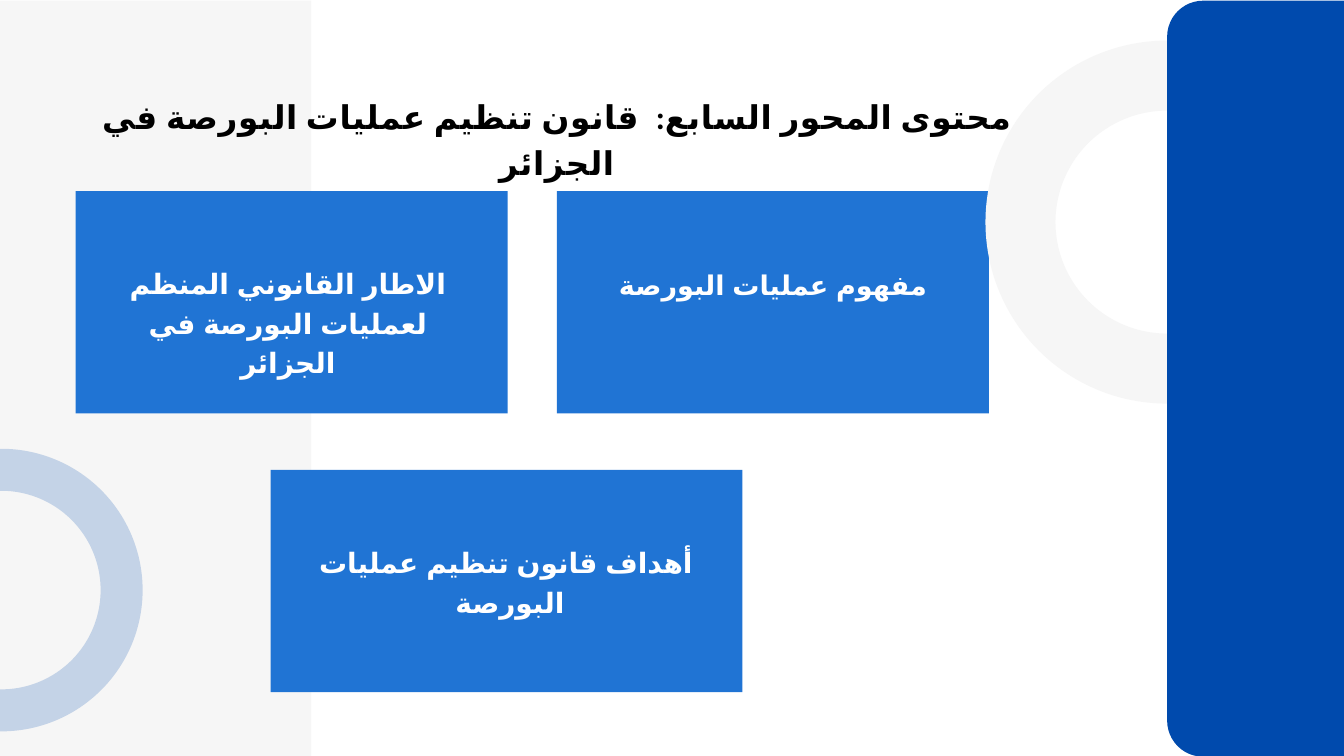
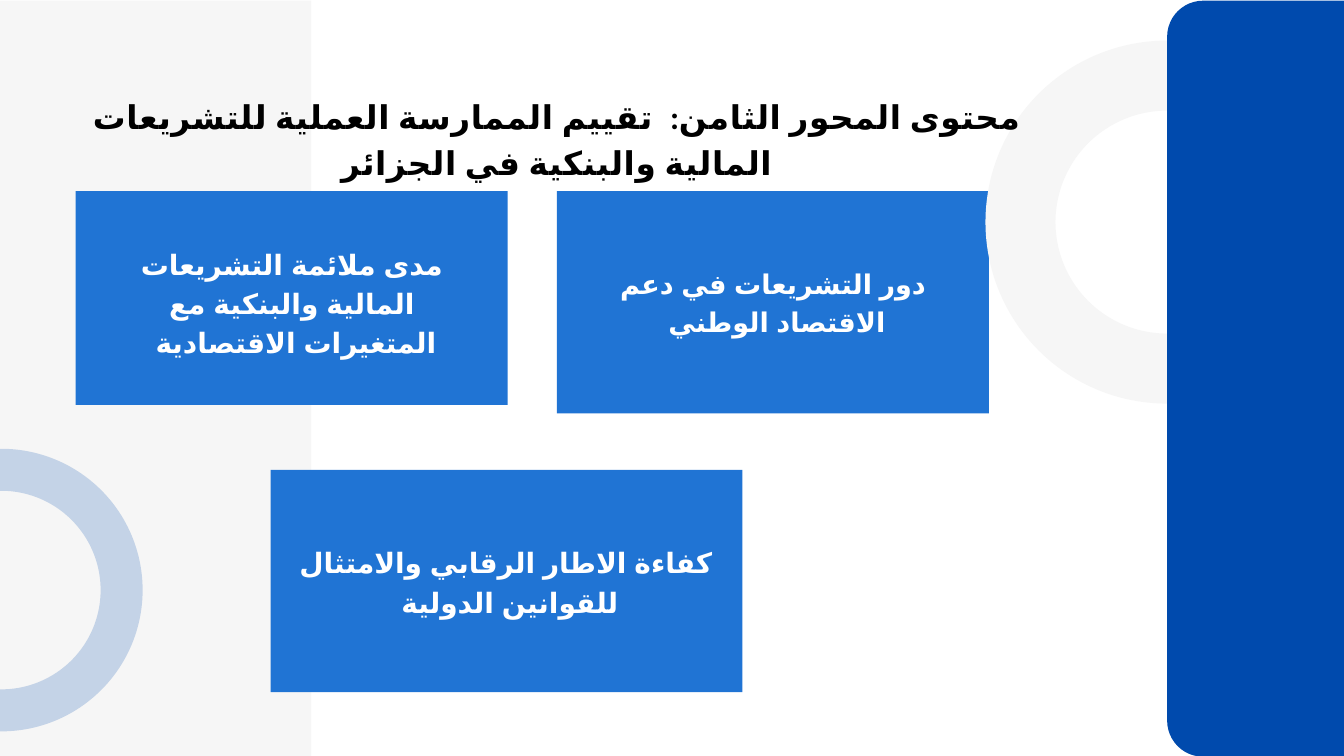
from dataclasses import dataclass

from lxml import etree
from pptx import Presentation
from pptx import util as u
from pptx.dml.color import RGBColor
from pptx.enum import shapes, text
from pptx.oxml import ns

PALE = RGBColor(0xF6, 0xF6, 0xF6)
CARD_BLUE = RGBColor(0x20, 0x74, 0xD4)
NAVY = RGBColor(0x00, 0x4A, 0xAD)
WHITE = RGBColor(0xFF, 0xFF, 0xFF)
BLACK = RGBColor(0x00, 0x00, 0x00)

# Lengths are counted on a grid of 100 columns by 100 rows.
WIDTH, HEIGHT = u.Inches(20), u.Inches(11.25)
COL, ROW = WIDTH / 100, HEIGHT / 100
TOP = 0.09
LINE_RATIO = 1.4
LANGUAGE = "ar-DZ"


@dataclass(frozen=True)
class Box:
    left: float
    top: float
    width: float
    height: float

    def emu(self) -> tuple[int, ...]:
        return (round(self.left * COL), round(self.top * ROW),
                round(self.width * COL), round(self.height * ROW))


@dataclass(frozen=True)
class Ring:
    left: float
    top: float
    diameter: float
    color: RGBColor
    weight: float
    alpha: int = 100

    def box(self) -> Box:
        return Box(self.left, self.top, self.diameter, self.diameter * COL / ROW)


@dataclass(frozen=True)
class TextStyle:
    size: float
    color: RGBColor = WHITE
    font: str = "Montserrat"
    spacing: float = 0


@dataclass(frozen=True)
class Card:
    label: str
    box: Box
    label_box: Box
    style: TextStyle


@dataclass(frozen=True)
class Topic:
    title: str
    cards: tuple[Card, ...]


CARD_W, CARD_H, CARD_TOP, CARD_GAP = 32.15, 29.42, 25.27, 3.66
CARD_LEFT = 5.62
LOWER_TOP = 62.14
PANEL = Box(0, TOP, 23.15, 100)
BAR = Box(86.84, TOP, 16.75, 100)
TITLE_BOX = Box(5.75, 12, 71.35, 6.13)
TITLE_STYLE = TextStyle(35, BLACK, "Calibri", 0.7)
LABEL_STYLE, NARROW_STYLE = TextStyle(30), TextStyle(29)
UPPER_RING = Ring(75.93, 10, 21.8, PALE, 75)
LOWER_RING = Ring(-8.85, LOWER_TOP, 17.9, NAVY, 45, 20)


def left_card(label: str, label_left: float, label_top: float,
              height: float = CARD_H) -> Card:
    return Card(label, Box(CARD_LEFT, CARD_TOP, CARD_W, height),
                Box(label_left, label_top, 28.25, 10.49), LABEL_STYLE)


def right_card(label: str, label_top: float) -> Card:
    return Card(label, Box(CARD_LEFT + CARD_W + CARD_GAP, CARD_TOP, CARD_W, CARD_H),
                Box(44.35, label_top, 26.35, 5.16), NARROW_STYLE)


def lower_card(label: str) -> Card:
    return Card(label, Box(20.13, LOWER_TOP, 35.1, CARD_H),
                Box(21.4, 71.47, 32.5, 5.24), LABEL_STYLE)


TOPICS = (
    Topic("محتوى المحور السابع:  قانون تنظيم عمليات البورصة في الجزائر", (
        left_card("الاطار القانوني المنظم لعمليات البورصة في الجزائر", 7.3, 34.58),
        right_card("مفهوم عمليات البورصة", 34.84),
        lower_card("أهداف قانون تنظيم عمليات البورصة "),
    )),
    Topic("محتوى المحور الثامن:  تقييم الممارسة العملية للتشريعات المالية والبنكية في الجزائر", (
        left_card("مدى ملائمة التشريعات المالية والبنكية مع المتغيرات الاقتصادية ",
                  7.6, 32, 28.29),
        right_card("دور التشريعات في دعم الاقتصاد الوطني ", 34.67),
        lower_card("كفاءة الاطار الرقابي والامتثال للقوانين الدولية "),
    )),
)


def set_all(target: object, values: dict[str, object]) -> None:
    for name, value in values.items():
        setattr(target, name, value)


def add_block(s, box: Box, color: RGBColor,
              kind=shapes.MSO_SHAPE.RECTANGLE):
    """Add a filled shape without outline or shadow."""
    sp = s.shapes.add_shape(kind, *box.emu())
    sp.shadow.inherit = False
    sp.fill.solid()
    sp.fill.fore_color.rgb = color
    sp.line.fill.background()
    return sp


def add_ring(s, ring: Ring) -> None:
    sp = s.shapes.add_shape(shapes.MSO_SHAPE.OVAL, *ring.box().emu())
    sp.shadow.inherit = False
    sp.fill.background()
    sp.line.color.rgb = ring.color
    sp.line.width = u.Pt(ring.weight)
    if ring.alpha < 100:
        color = sp.line._ln.find(".//" + ns.qn("a:srgbClr"))
        etree.SubElement(color, ns.qn("a:alpha")).set("val", str(ring.alpha * 1000))


def add_text(s, box: Box, words: str, style: TextStyle) -> None:
    """Add one centred right-to-left paragraph."""
    tf = s.shapes.add_textbox(*box.emu()).text_frame
    set_all(tf, {"word_wrap": True,
                 "auto_size": text.MSO_AUTO_SIZE.SHAPE_TO_FIT_TEXT,
                 "margin_left": 0, "margin_right": 0,
                 "margin_top": 0, "margin_bottom": 0})
    p = tf.paragraphs[0]
    set_all(p, {"alignment": text.PP_ALIGN.CENTER,
                "line_spacing": u.Pt(style.size * LINE_RATIO)})
    p._p.get_or_add_pPr().set("rtl", "1")
    r = p.add_run()
    r.text = words
    set_all(r.font, {"name": style.font, "size": u.Pt(style.size), "bold": True})
    r.font.color.rgb = style.color
    props = r._r.get_or_add_rPr()
    props.set("lang", LANGUAGE)
    for tag in ("a:ea", "a:cs", "a:sym"):
        if tag != "a:sym":
            etree.SubElement(props, ns.qn(tag)).set("typeface", style.font)
    if style.spacing:
        props.set("spc", str(round(style.spacing * 100)))


def add_topic(prs, topic: Topic) -> None:
    s = prs.slides.add_slide(prs.slide_layouts[6])
    add_block(s, PANEL, PALE)
    for card in topic.cards:
        add_block(s, card.box, CARD_BLUE)
        add_text(s, card.label_box, card.label, card.style)
    add_ring(s, UPPER_RING)
    bar = add_block(s, BAR, NAVY, shapes.MSO_SHAPE.ROUNDED_RECTANGLE)
    bar.adjustments[0] = 0.16
    add_text(s, TITLE_BOX, topic.title, TITLE_STYLE)
    add_ring(s, LOWER_RING)


def main() -> None:
    prs = Presentation()
    set_all(prs, {"slide_width": WIDTH, "slide_height": HEIGHT})
    for topic in TOPICS:
        add_topic(prs, topic)
    prs.save("out.pptx")


if __name__ == "__main__":
    main()
